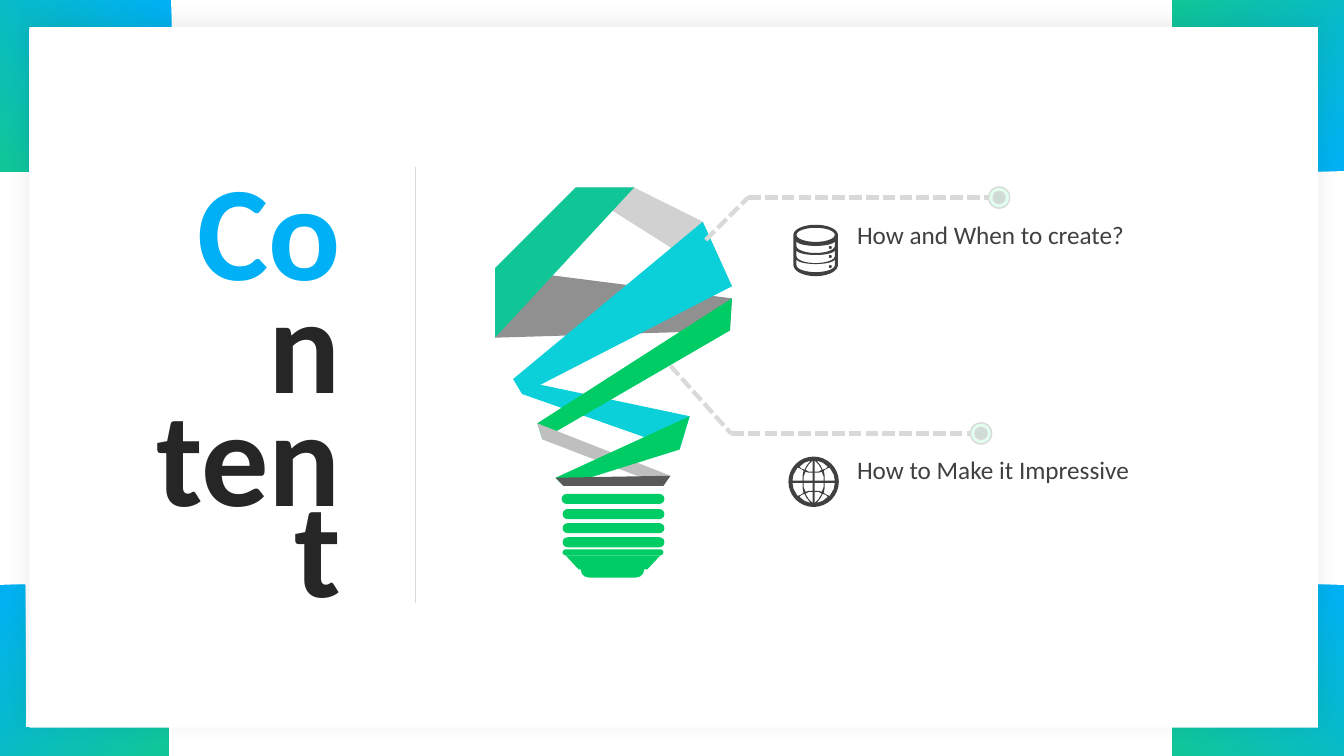
from math import cos, pi, sin

from lxml import etree
from pptx import Presentation
from pptx import util as u
from pptx.dml.color import RGBColor
from pptx.enum import dml, shapes, text
from pptx.oxml.ns import qn

# Content: lengths in inches
W, H = 13.33, 7.5
BLUE, TEAL, CYAN, GREEN = "00B0F6", "10C696", "0BD0D9", "00CC66"
PALE, DARK, INK = "D9D9D9", "404040", "262626"
ARM, BAND = 1.7, 0.28
# corner x, y, direction inwards, gradient angle (counter-clockwise)
CORNERS = [(0, 0, 1, 1, 225), (-0.03, H, 1, -1, 315),
           (W, 0, -1, 1, 135), (W, H, -1, -1, 225)]
# title part, top, width, colour (None is the gradient)
TITLE = [("Co", 1.4, 1.64, None), ("n", 2.52, 0.92, INK),
         ("ten", 3.64, 2.05, INK), ("t", 4.54, 0.67, INK)]
TITLE_RIGHT = 3.48
# label, label top, line start, bend, dot left
CALLOUTS = [("How and When to create?", 2.13, (7, 2.38), (7.42, 1.96), 9.81),
            ("How to Make it Impressive", 4.46, (6.65, 3.63), (7.25, 4.3), 9.63)]
RIBBONS = [
    ("D1D1D1", [(5.71, 1.86), (7.26, 2.84), (6.97, 2.2), (6.29, 1.86)]),
    ("909090", [(4.91, 2.66), (7.26, 2.96), (7.24, 3.28), (4.91, 3.35)]),
    (CYAN, [(6.97, 2.2), (5.09, 3.76), (5.18, 3.91), (7.26, 2.84)]),
    (CYAN, [(5.09, 3.76), (6.84, 4.13), (6.74, 4.46), (5.18, 3.91)]),
    (GREEN, [(7.26, 2.96), (5.33, 4.2), (5.38, 4.36), (7.24, 3.28)]),
    ("BFBFBF", [(5.33, 4.2), (6.65, 4.72), (6.58, 4.82), (5.38, 4.36)]),
    (TEAL, [(5.71, 1.86), (4.91, 2.66), (4.91, 3.35), (6.29, 1.86)]),
    (GREEN, [(5.59, 4.82), (6.74, 4.46), (6.84, 4.13), (5.51, 4.74)]),
    ("595959", [(5.51, 4.74), (6.65, 4.72), (6.58, 4.82), (5.59, 4.82)]),
]
# screw base of the bulb: left, top, width, height
THREADS = [(5.76, 5.57, 0.63, 0.16), (5.57, 4.9, 1.02, 0.1), (5.58, 5.45, 1, 0.06)]
THREADS += [(5.58, 5.05 + 0.14 * i, 1.01, 0.1) for i in range(3)]
FUNNEL = [(5.61, 5.51), (6.55, 5.51), (6.42, 5.65), (5.74, 5.65)]
# openings in one quarter of the globe, measured from its centre
GLOBE = (8.07, 4.78)
GLOBE_CELLS = [
    [(.01, .01), (.01, .09), (.05, .09), (.08, .1), (.1, .05), (.1, .01)],
    [(.11, .01), (.21, .01), (.2, .07), (.16, .14), (.13, .13), (.1, .11), (.11, .06)],
    [(.01, .21), (.01, .1), (.05, .1), (.08, .12), (.05, .17)],
    [(.03, .21), (.07, .16), (.09, .12), (.12, .13), (.14, .15), (.09, .19)],
]
DISK_X = 8.09
DISK_BANDS = [(2.39, 2.44), (2.48, 2.54), (2.57, 2.63)]

prs = Presentation()
prs.slide_width, prs.slide_height = u.Inches(W), u.Inches(H)
s = prs.slides.add_slide(prs.slide_layouts[6])


def rgb(value):
    return RGBColor.from_string(value)


def gradient(fill, angle):
    fill.gradient()
    fill.gradient_angle = angle
    for stop, color in zip(fill.gradient_stops, (BLUE, TEAL)):
        stop.color.rgb = rgb(color)


def paint(sp, fill, alpha=None, line=None):
    sp.shadow.inherit = False
    if fill:
        sp.fill.solid()
        sp.fill.fore_color.rgb = rgb(fill)
    if alpha:
        color = next(sp.element.spPr.iter(qn("a:srgbClr")))
        etree.SubElement(color, qn("a:alpha"), val=str(alpha * 1000))
    if line:
        sp.line.color.rgb, sp.line.width = rgb(line), u.Pt(1)
    else:
        sp.line.fill.background()
    return sp


def preset(kind, box, fill, **look):
    return paint(s.shapes.add_shape(kind, *map(u.Inches, box)), fill, **look)


def outline(contours, fill):
    contours = [[(u.Inches(x), u.Inches(y)) for x, y in c] for c in contours]
    builder = s.shapes.build_freeform(*contours[0][0])
    for i, points in enumerate(contours):
        if i:
            builder.move_to(*points[0])
        builder.add_line_segments(points[1:], close=True)
    return paint(builder.convert_to_shape(), fill)


def arc(cx, cy, rx, ry, start=0, end=360, steps=32):
    angles = [(start + (end - start) * i / steps) * pi / 180 for i in range(steps + 1)]
    return [(cx + rx * cos(a), cy + ry * sin(a)) for a in angles]


def line(start, end, width, dash=None):
    c = s.shapes.add_connector(shapes.MSO_CONNECTOR.STRAIGHT,
                               *map(u.Inches, (*start, *end)))
    c.line.color.rgb, c.line.width = rgb(PALE), u.Pt(width)
    if dash:
        c.line.dash_style = dash
    etree.SubElement(c.element.spPr, qn("a:effectLst"))


def write(words, box, size, color=None, bold=False, align=None, inset=None, wrap=True):
    tf = s.shapes.add_textbox(*map(u.Inches, box)).text_frame
    tf.word_wrap = wrap
    if inset is not None:
        tf.margin_left = tf.margin_right = u.Inches(inset)
        tf.margin_top = tf.margin_bottom = u.Inches(inset)
    p = tf.paragraphs[0]
    p.alignment = align
    r = p.add_run()
    r.text = words
    r.font.name, r.font.size, r.font.bold = "Calibri", u.Pt(size), bold
    if color:
        r.font.color.rgb = rgb(color)
    else:
        gradient(r.font.fill, 315)


# Corner brackets
for x, y, dx, dy, angle in CORNERS:
    bracket = [(0, 0), (ARM, 0), (ARM, BAND), (BAND, BAND), (BAND, ARM), (0, ARM)]
    sp = outline([[(x + dx * a, y + dy * b) for a, b in bracket]], None)
    gradient(sp.fill, angle)

# White card with a soft shadow
card = preset(shapes.MSO_SHAPE.RECTANGLE, (0.29, 0.27, 12.78, 6.95), "FFFFFF")
shadow = etree.SubElement(card.element.spPr.find(qn("a:effectLst")), qn("a:outerShdw"),
                          blurRad=str(u.Pt(16)), dist=str(u.Pt(3)),
                          dir="16200000", algn="b", rotWithShape="0")
tint = etree.SubElement(shadow, qn("a:srgbClr"), val="000000")
etree.SubElement(tint, qn("a:alpha"), val="7000")

# Bulb
for box in THREADS:
    sp = preset(shapes.MSO_SHAPE.ROUNDED_RECTANGLE, box, GREEN)
    sp.adjustments[0] = 0.5
outline([FUNNEL], GREEN)
for color, points in RIBBONS:
    outline([points], color)

# Callouts
for label, top, start, bend, dot in CALLOUTS:
    dash = dml.MSO_LINE.SQUARE_DOT
    line(start, bend, 3, dash)
    line(bend, (dot, bend[1]), 3, dash)
    for size, fill, alpha in [(0.21, "4CFFA5", 17), (0.12, "BFBFBF", 54)]:
        box = (dot + 0.1 - size / 2, bend[1] - size / 2, size, size)
        preset(shapes.MSO_SHAPE.OVAL, box, fill, alpha=alpha, line=PALE)
    write(label, (8.45, top, 2.81, 0.41), 18, DARK, inset=0.05)

# Database icon
disks = [arc(DISK_X, 2.33, 0.22, 0.1, 180, 360) + arc(DISK_X, 2.63, 0.22, 0.11, 0, 180),
         arc(DISK_X, 2.33, 0.19, 0.07)]
for upper, lower in DISK_BANDS:
    disks.append(arc(DISK_X, upper, 0.19, 0.05, 180, 0)
                 + arc(DISK_X, lower, 0.19, 0.07, 0, 180))
outline(disks, DARK)
for top in (2.44, 2.53, 2.63):
    preset(shapes.MSO_SHAPE.OVAL, (8.22, top, 0.03, 0.03), DARK)

# Globe icon
gx, gy = GLOBE
cells = [[(gx + dx * a, gy + dy * b) for a, b in cell]
         for cell in GLOBE_CELLS for dx in (1, -1) for dy in (1, -1)]
outline([arc(gx, gy, 0.25, 0.25)] + cells, DARK)

# Title and divider
for part, top, width, color in TITLE:
    write(part, (TITLE_RIGHT - width, top, width, 1.72), 96, color, bold=True,
          align=text.PP_ALIGN.RIGHT, wrap=False)
line((4.12, 1.66), (4.12, 5.98), 0.5)

prs.save("out.pptx")
